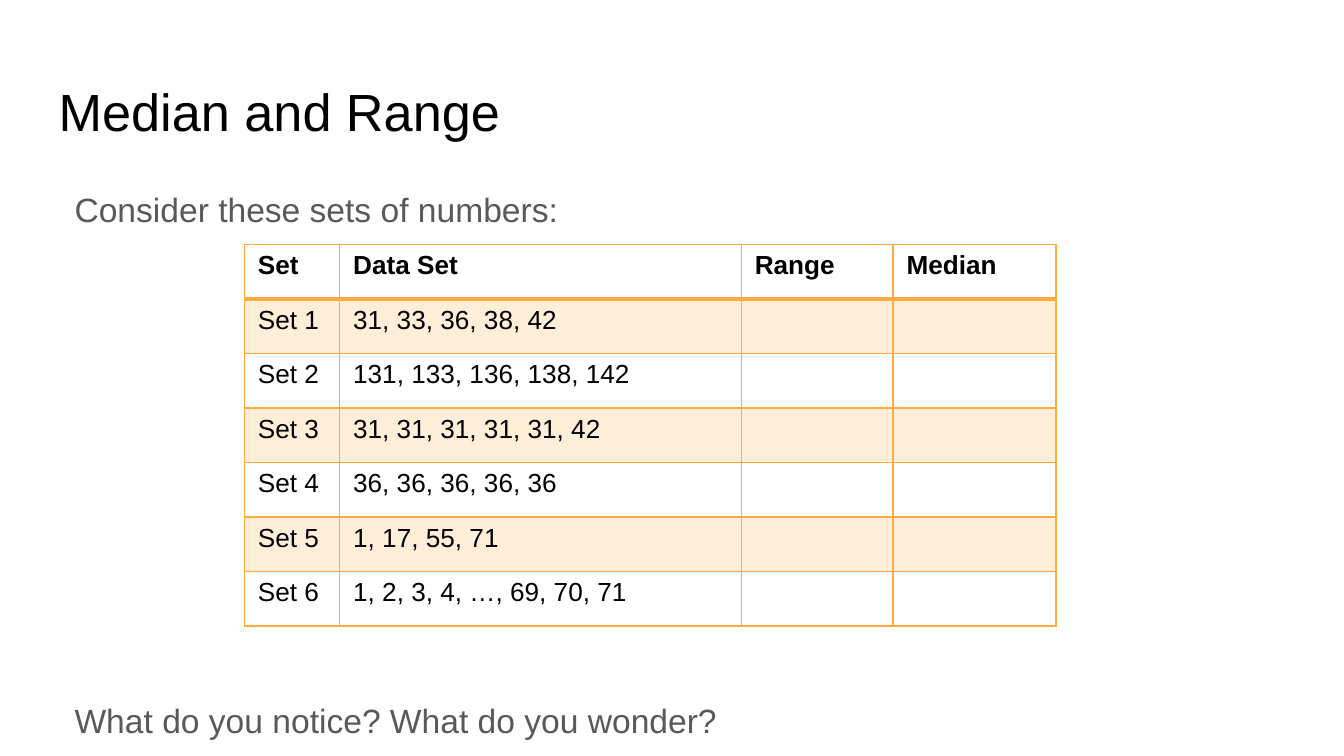
from lxml.etree import SubElement
from pptx import Presentation
from pptx.dml.color import RGBColor
from pptx.oxml.ns import qn
from pptx.util import Cm, Pt

BLACK = RGBColor(0x00, 0x00, 0x00)
GREY = RGBColor(0x59, 0x59, 0x59)
ORANGE = RGBColor(0xFF, 0xAB, 0x40)

TITLE = "Median and Range"
PROMPTS = ["Consider these sets of numbers:", "What do you notice? What do you wonder?"]
HEADER = ["Set", "Data Set", "Range", "Median"]
DATA_SETS = [
    "31, 33, 36, 38, 42",
    "131, 133, 136, 138, 142",
    "31, 31, 31, 31, 31, 42",
    "36, 36, 36, 36, 36",
    "1, 17, 55, 71",
    "1, 2, 3, 4, …, 69, 70, 71",
]
ROWS = [HEADER] + [
    [f"Set {number}", values, "", ""] for number, values in enumerate(DATA_SETS, 1)
]
COLUMN_WIDTHS = [1.8, 7.59, 2.87, 3.08]
ROW_HEIGHT = 1.03
TABLE_LEFT, TABLE_TOP = 4.62, 4.62
TEXT_LEFT, TEXT_WIDTH = 0.86, 23.67
INSET = Cm(0.25)
PROMPT_GAP = Pt(249)  # leaves room for the table between the prompts


def add_text(page, top, height, lines, size, color):
    box = page.shapes.add_textbox(Cm(TEXT_LEFT), Cm(top), Cm(TEXT_WIDTH), Cm(height))
    frame = box.text_frame
    frame.word_wrap = True
    for side in ("left", "top", "right", "bottom"):
        setattr(frame, f"margin_{side}", INSET)
    frame.text = "\n".join(lines)
    for para in frame.paragraphs:
        style(para.runs[0], size, color)
    return frame


def style(span, size, color, bold=False):
    span.font.color.rgb = color
    for name, value in {"name": "Arial", "size": Pt(size), "bold": bold}.items():
        setattr(span.font, name, value)


def add_borders(cell, widths):
    """Draw the left, right, top and bottom borders, with widths in points."""
    properties = cell._tc.get_or_add_tcPr()
    for side, width in zip("LRTB", widths):
        line = SubElement(properties, qn(f"a:ln{side}"), w=str(Pt(width)))
        fill = SubElement(line, qn("a:solidFill"))
        SubElement(fill, qn("a:srgbClr"), val=str(ORANGE))


def fill_cell(cell, banded):
    if not banded:
        cell.fill.background()
        return
    cell.fill.solid()
    cell.fill.fore_color.rgb = ORANGE
    color = cell._tc.tcPr.find(f"{qn('a:solidFill')}/{qn('a:srgbClr')}")
    SubElement(color, qn("a:alpha"), val="20000")


def add_data_table(page):
    table = page.shapes.add_table(
        len(ROWS), len(HEADER), Cm(TABLE_LEFT), Cm(TABLE_TOP),
        Cm(sum(COLUMN_WIDTHS)), Cm(ROW_HEIGHT * len(ROWS)),
    ).table
    table.first_row = table.horz_banding = False
    for column, width in zip(table.columns, COLUMN_WIDTHS):
        column.width = Cm(width)
    for row_index, texts in enumerate(ROWS):
        table.rows[row_index].height = Cm(ROW_HEIGHT)
        is_header = row_index == 0
        for column_index, text in enumerate(texts):
            cell = table.cell(row_index, column_index)
            top_width = 2 if row_index == 1 else 1
            add_borders(cell, (1, 1, top_width, 2 if is_header else 1))
            fill_cell(cell, banded=row_index % 2 == 1)
            if text:
                cell.text = text
                style(cell.text_frame.paragraphs[0].runs[0], 14, BLACK, is_header)


def main():
    deck = Presentation()
    deck.slide_width, deck.slide_height = Cm(25.4), Cm(14.29)
    page = deck.slides.add_slide(deck.slide_layouts[6])
    add_text(page, 1.24, 1.6, [TITLE], 28, BLACK)
    prompts = add_text(page, 3.2, 11.07, PROMPTS, 18, GREY)
    for para in prompts.paragraphs:
        para.line_spacing = 1.15
        para._p.get_or_add_pPr().set("marL", str(Cm(0.3)))
    prompts.paragraphs[1].space_before = PROMPT_GAP
    add_data_table(page)
    deck.save("out.pptx")


if __name__ == "__main__":
    main()
